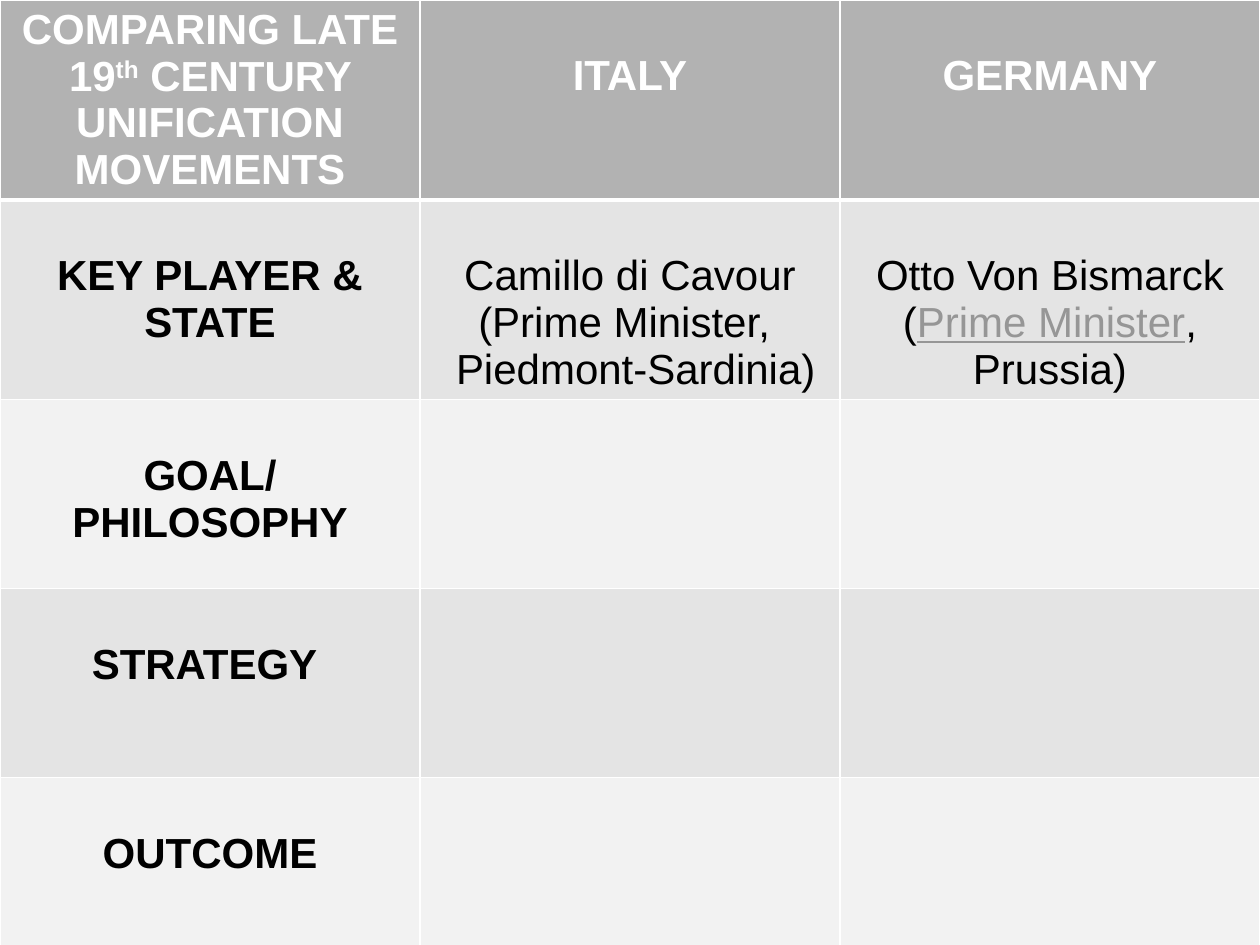
from dataclasses import dataclass

from lxml.etree import SubElement
from pptx import Presentation
from pptx.dml.color import RGBColor
from pptx.enum.text import PP_ALIGN as Align
from pptx.oxml.ns import qn
from pptx.util import Inches, Pt

WHITE, BLACK, LINK = "FFFFFF", "000000", "969696"
HEADER, DARK_BAND, LIGHT_BAND = "B2B2B2", "E4E4E4", "F2F2F2"
WIDTH, HEIGHT = 10, 7.5
TOP_MARGIN, LINE_HEIGHT = 0.05, 0.37


@dataclass
class Run:
    text: str
    color: str = BLACK
    bold: bool = False
    underline: bool = False
    raised: bool = False


@dataclass
class Cell:
    paragraphs: list[list[Run]]
    lines_above: int = 1


def rgb(color: str) -> RGBColor:
    return RGBColor.from_string(color)


def title(text: str) -> Cell:
    return Cell([[Run(text, WHITE, bold=True)]])


def label(text: str) -> Cell:
    return Cell([[Run(text, bold=True)]])


ROWS = [
    [
        Cell([[Run("COMPARING LATE 19", WHITE, True),
               Run("th", WHITE, True, raised=True),
               Run(" CENTURY UNIFICATION MOVEMENTS", WHITE, True)]], lines_above=0),
        title("ITALY"),
        title("GERMANY"),
    ],
    [
        label("KEY PLAYER & STATE"),
        Cell([[Run("Camillo di Cavour")],
              [Run("(Prime Minister, ")],
              [Run(" Piedmont-Sardinia)")]]),
        Cell([[Run("Otto Von Bismarck")],
              [Run("("), Run("Prime Minister", LINK, underline=True),
               Run(", Prussia)")]]),
    ],
    [label("GOAL/PHILOSOPHY")],
    [label("STRATEGY ")],
    [label("OUTCOME")],
]
COLUMNS = len(ROWS[0])


def draw_borders(cell, row: int) -> None:
    """White rules all round, thicker between the header and the body."""
    widths = {"L": 1, "R": 1, "T": 3 if row == 1 else 1, "B": 3 if row == 0 else 1}
    tc_pr = cell._tc.get_or_add_tcPr()
    for side, width in widths.items():
        ln = SubElement(tc_pr, qn(f"a:ln{side}"), w=str(Pt(width)))
        fill = SubElement(ln, qn("a:solidFill"))
        SubElement(fill, qn("a:srgbClr"), val=WHITE)


def write_run(p, run: Run) -> None:
    r = p.add_run()
    r.text = run.text
    style = {"name": "Arial", "size": Pt(24), "bold": run.bold,
             "underline": run.underline}
    for name, value in style.items():
        setattr(r.font, name, value)
    r.font.color.rgb = rgb(run.color)
    if run.raised:
        r.font._element.set("baseline", "30000")


def write_cell(cell, content: Cell) -> None:
    cell.margin_top = Inches(TOP_MARGIN + content.lines_above * LINE_HEIGHT)
    tf = cell.text_frame
    for i, runs in enumerate(content.paragraphs):
        p = tf.add_paragraph() if i else tf.paragraphs[0]
        p.alignment = Align.CENTER
        for run in runs:
            write_run(p, run)


def main() -> None:
    prs = Presentation()
    prs.slide_width, prs.slide_height = Inches(WIDTH), Inches(HEIGHT)
    s = prs.slides.add_slide(prs.slide_layouts[6])
    s.background.fill.solid()
    s.background.fill.fore_color.rgb = rgb(BLACK)

    table = s.shapes.add_table(len(ROWS), COLUMNS, 0, 0,
                               Inches(WIDTH), Inches(HEIGHT)).table
    for i, contents in enumerate(ROWS):
        band = DARK_BAND if i % 2 else LIGHT_BAND
        for j in range(COLUMNS):
            cell = table.cell(i, j)
            draw_borders(cell, i)
            cell.fill.solid()
            cell.fill.fore_color.rgb = rgb(band if i else HEADER)
            if j < len(contents):
                write_cell(cell, contents[j])

    prs.save("out.pptx")


if __name__ == "__main__":
    main()
